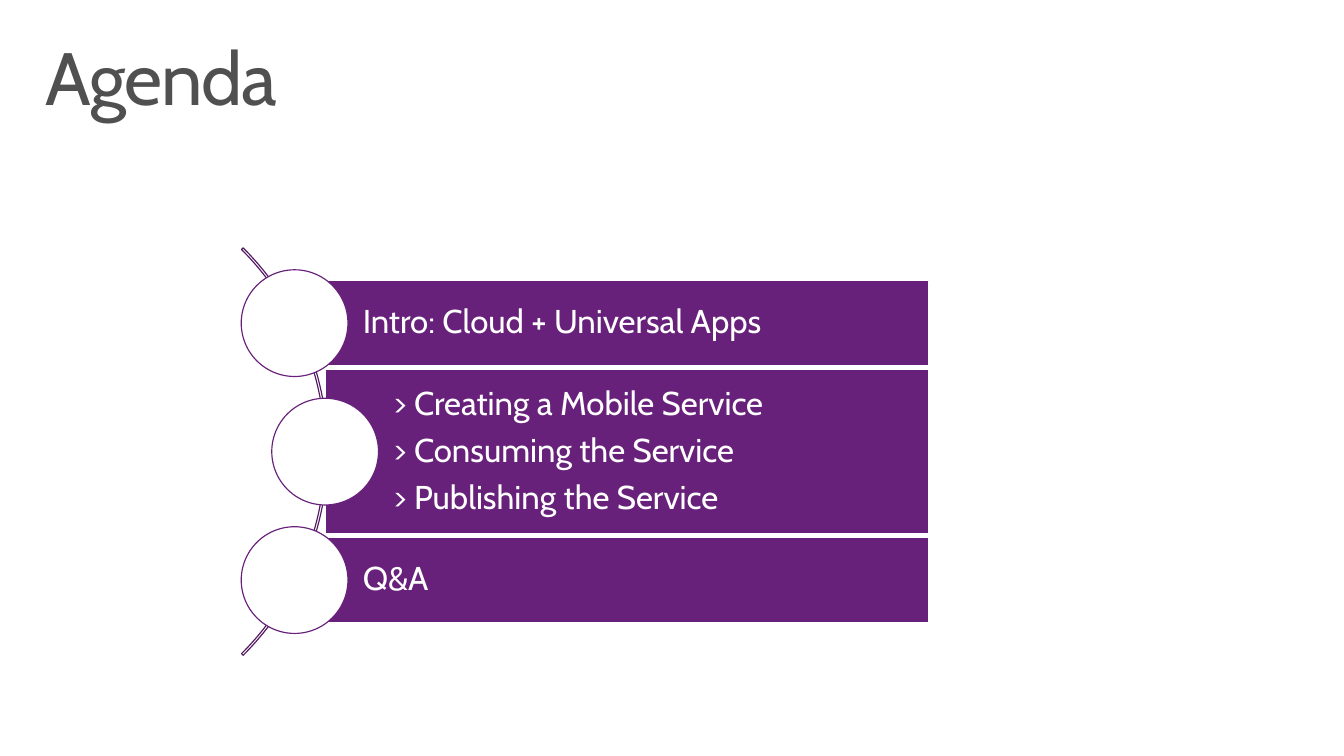
import math

import pptx
import pptx.util
from pptx.dml.color import RGBColor
from pptx.enum.shapes import MSO_SHAPE
from pptx.enum.text import MSO_ANCHOR, PP_ALIGN

Inches, Pt = pptx.util.Inches, pptx.util.Pt

TITLE = "Agenda"
# Each bar: its height and its lines of text
AGENDA = [
    (0.87, ["Intro: Cloud + Universal Apps"]),
    (1.67, ["> Creating a Mobile Service",
            "> Consuming the Service",
            "> Publishing the Service"]),
    (0.87, ["Q&A"]),
]

FONT = "Cabin"
WHITE = RGBColor(0xFF, 0xFF, 0xFF)
GREY = RGBColor(0x50, 0x50, 0x50)
PURPLE = RGBColor(0x68, 0x21, 0x7A)
DARK_PURPLE = RGBColor(0x53, 0x1A, 0x62)

SLIDE_WIDTH, SLIDE_HEIGHT = 13.6, 7.65
ARC_X, ARC_Y = 0.4, 4.57
ARC_DIAMETER = 5.83
CIRCLE_ORBIT = 2.89
CIRCLE_DIAMETER = 1.08
CIRCLE_STEP = 1.3
BAR_RIGHT = 9.4
BAR_GAP = 0.03


def add_outlined(slide, kind, left, top, width, height, line, fill=None):
    shape = slide.shapes.add_shape(
        kind, Inches(left), Inches(top), Inches(width), Inches(height))
    shape.shadow.inherit = False
    shape.line.color.rgb = line
    shape.line.width = Pt(0.85)
    if fill is None:
        shape.fill.background()
    else:
        shape.fill.solid()
        shape.fill.fore_color.rgb = fill
    return shape


def write_lines(shape, lines, size, color, insets, space_after=0):
    """Fill a shape with left-aligned lines; insets are left, top, right, bottom."""
    frame = shape.text_frame
    frame.word_wrap = True
    (frame.margin_left, frame.margin_top,
     frame.margin_right, frame.margin_bottom) = map(Inches, insets)
    for index, line in enumerate(lines):
        para = frame.add_paragraph() if index else frame.paragraphs[0]
        para.text = line
        para.alignment = PP_ALIGN.LEFT
        para.line_spacing = 0.9
        para.space_after = Pt(space_after)
        para.font.name = FONT
        para.font.size = Pt(size)
        para.font.color.rgb = color
    return frame


def add_title(slide):
    box = slide.shapes.add_textbox(
        Inches(0.3), Inches(0.32), Inches(13), Inches(1))
    frame = write_lines(box, [TITLE], 54, GREY, (0.16, 0.1, 0.16, 0.1))
    frame.paragraphs[0].runs[0].font._element.set("spc", "-100")


def add_agenda(slide):
    arc = add_outlined(
        slide, MSO_SHAPE.BLOCK_ARC, ARC_X - ARC_DIAMETER / 2,
        ARC_Y - ARC_DIAMETER / 2, ARC_DIAMETER, ARC_DIAMETER, DARK_PURPLE)
    for index, value in enumerate((189, 27, 0.004)):
        arc.adjustments[index] = value

    heights = [height for height, _ in AGENDA]
    bar_top = ARC_Y - (sum(heights) + BAR_GAP * (len(AGENDA) - 1)) / 2
    for index, (height, lines) in enumerate(AGENDA):
        offset = (index - (len(AGENDA) - 1) / 2) * CIRCLE_STEP
        center_x = ARC_X + math.sqrt(CIRCLE_ORBIT ** 2 - offset ** 2)
        bar = add_outlined(slide, MSO_SHAPE.RECTANGLE, center_x, bar_top,
                           BAR_RIGHT - center_x, height, WHITE, PURPLE)
        frame = write_lines(bar, lines, 24, WHITE,
                            (0.69, 0.07, 0.07, 0.07), space_after=8.4)
        frame.vertical_anchor = MSO_ANCHOR.MIDDLE
        add_outlined(slide, MSO_SHAPE.OVAL, center_x - CIRCLE_DIAMETER / 2,
                     ARC_Y + offset - CIRCLE_DIAMETER / 2,
                     CIRCLE_DIAMETER, CIRCLE_DIAMETER, PURPLE, WHITE)
        bar_top += height + BAR_GAP


def main():
    deck = pptx.Presentation()
    deck.slide_width = Inches(SLIDE_WIDTH)
    deck.slide_height = Inches(SLIDE_HEIGHT)
    slide = deck.slides.add_slide(deck.slide_layouts[6])
    add_title(slide)
    add_agenda(slide)
    deck.save("out.pptx")


if __name__ == "__main__":
    main()
